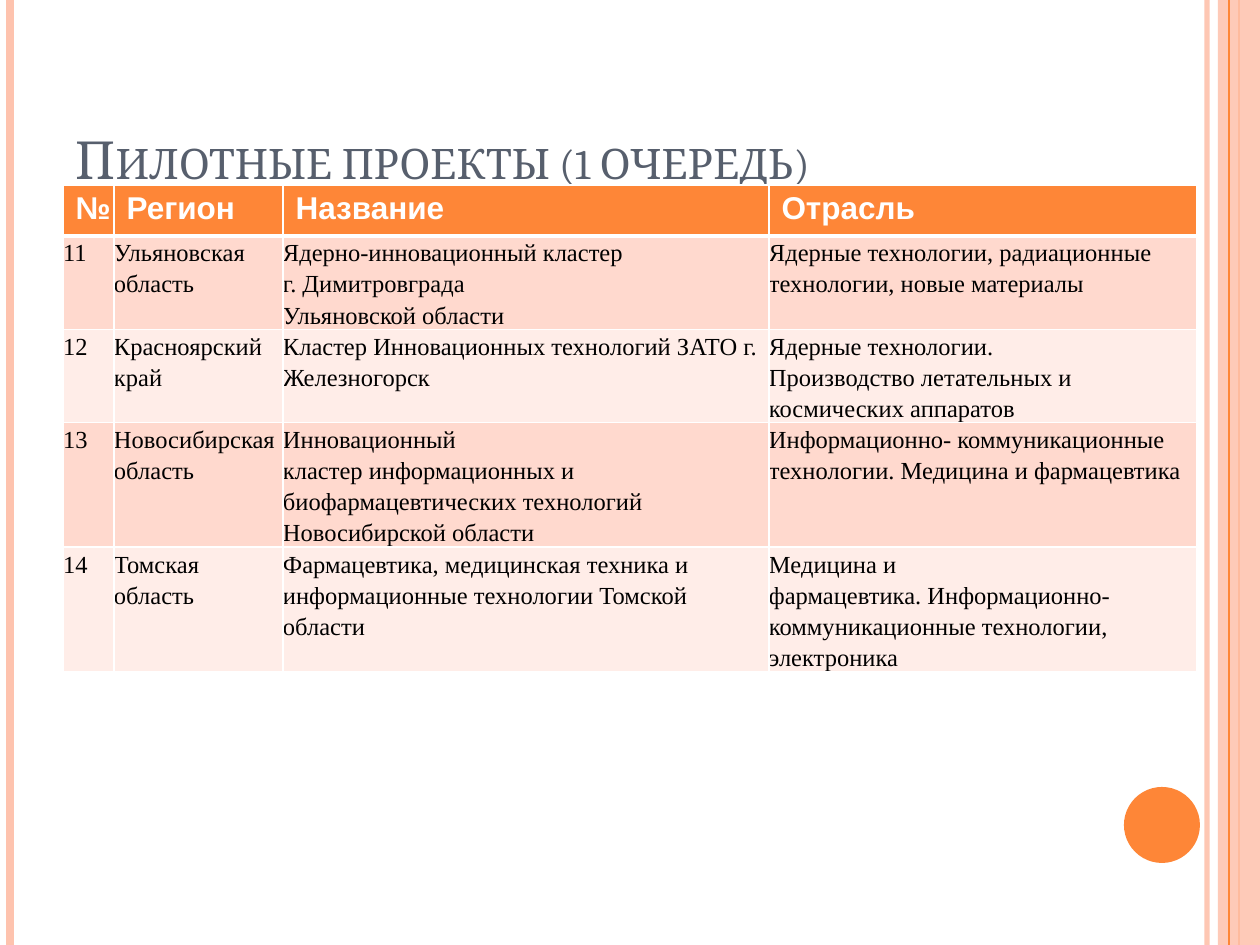
"""Builds the slide with the table of first-round pilot projects."""
from pptx import Presentation, util as u
from pptx.dml.color import RGBColor
from pptx.enum import shapes, text
from pptx.oxml.ns import qn
from pptx.oxml.xmlchemy import OxmlElement

ORANGE, PEACH, WHITE, SLATE, BLACK = "FE8637", "FEC3AE", "FFFFFF", "575F6D", "000000"
BANDS = ["FFD9CE", "FFEDE8"]
TITLE = "Пилотные проекты (1 очередь)"
HEADER = ["№", "Регион", "Название", "Отрасль"]
PROJECTS = [
    ["11", "Ульяновская область",
     "Ядерно-инновационный кластер\nг. Димитровграда\nУльяновской области",
     "Ядерные технологии, радиационные технологии, новые материалы"],
    ["12", "Красноярский край",
     "Кластер Инновационных технологий ЗАТО г. Железногорск",
     "Ядерные технологии.\nПроизводство летательных и космических аппаратов"],
    ["13", "Новосибирская область",
     "Инновационный\nкластер информационных и биофармацевтических технологий Новосибирской области",
     "Информационно- коммуникационные технологии. Медицина и фармацевтика"],
    ["14", "Томская область",
     "Фармацевтика, медицинская техника и информационные технологии Томской области",
     "Медицина и\nфармацевтика. Информационно- коммуникационные технологии, электроника"],
]
COLS = [51, 169, 486, 428]
ROWS = [51, 93, 93, 124, 124]
WIDTH, HEIGHT = 1260, 945
STRIPES = [(1207, PEACH, 3, 93), (10, PEACH, 4.5, 100),
           (1239, ORANGE, 1.5, 100), (1229, ORANGE, 0.75, 100)]
BLOCKS = [(shapes.MSO_SHAPE.RECTANGLE, (1218, 0, 42, HEIGHT), PEACH, 87),
          (shapes.MSO_SHAPE.OVAL, (1124, 787, 76, 76), ORANGE, 100)]


def px(n):
    return u.Emu(n * 914400 // 126)


def rgb(value):
    return RGBColor.from_string(value)


def set_alpha(sp, percent):
    if percent < 100:
        for color in sp._element.iter(qn("a:srgbClr")):
            alpha = OxmlElement("a:alpha")
            alpha.set("val", str(percent * 1000))
            color.append(alpha)


def set_font(p, name, size, color, bold=False):
    p.font.name, p.font.size, p.font.bold = name, u.Pt(size), bold
    p.font.color.rgb = rgb(color)


def add_stripe(s, x, color, width, alpha):
    line = s.shapes.add_connector(shapes.MSO_CONNECTOR.STRAIGHT, px(x), 0, px(x), px(HEIGHT))
    line.line.color.rgb, line.line.width = rgb(color), u.Pt(width)
    line._element.spPr.append(OxmlElement("a:effectLst"))
    set_alpha(line, alpha)


def add_block(s, kind, box, color, alpha):
    sp = s.shapes.add_shape(kind, *map(px, box))
    sp.shadow.inherit = False
    sp.fill.solid()
    sp.fill.fore_color.rgb = rgb(color)
    sp.line.fill.background()
    set_alpha(sp, alpha)


def set_borders(cell, **widths):
    for side, width in widths.items():
        ln = OxmlElement(f"a:ln{side}")
        ln.set("w", str(u.Pt(width)))
        fill, color = OxmlElement("a:solidFill"), OxmlElement("a:srgbClr")
        color.set("val", WHITE)
        fill.append(color)
        ln.append(fill)
        cell._tc.get_or_add_tcPr().append(ln)


def fill_cell(cell, value, row):
    head = row == 0
    set_borders(cell, L=1, R=1, T=3 if row == 1 else 1, B=3 if head else 1)
    cell.fill.solid()
    cell.fill.fore_color.rgb = rgb(ORANGE if head else BANDS[(row - 1) % 2])
    cell.text = value
    if not head:
        cell.margin_left = cell.margin_right = cell.margin_top = cell.margin_bottom = 0
    for p in cell.text_frame.paragraphs:
        if head:
            set_font(p, "Arial", 18, WHITE, True)
        else:
            set_font(p, "Times New Roman", 14, BLACK)
            p.line_spacing = 1.15


def add_title(s):
    sp = s.shapes.title
    sp.left, sp.top, sp.width, sp.height = map(px, (63, 38, 1029, 158))
    tf = sp.text_frame
    tf.text, tf.vertical_anchor = TITLE, text.MSO_ANCHOR.BOTTOM
    p = tf.paragraphs[0]
    p.alignment = text.PP_ALIGN.LEFT
    set_font(p, "Cambria", 30, SLATE)
    p.runs[0].font._element.set("cap", "small")


def add_projects(s):
    box = map(px, (63, 185, sum(COLS), sum(ROWS)))
    table = s.shapes.add_table(len(ROWS), len(COLS), *box).table
    for column, width in zip(table.columns, COLS):
        column.width = px(width)
    for i, (height, values) in enumerate(zip(ROWS, [HEADER] + PROJECTS)):
        table.rows[i].height = px(height)
        for j, value in enumerate(values):
            fill_cell(table.cell(i, j), value, i)


def main():
    prs = Presentation()
    prs.slide_width, prs.slide_height = px(WIDTH), px(HEIGHT)
    s = prs.slides.add_slide(prs.slide_layouts[5])
    for stripe in STRIPES[:3]:
        add_stripe(s, *stripe)
    add_block(s, *BLOCKS[0])
    add_stripe(s, *STRIPES[3])
    add_block(s, *BLOCKS[1])
    add_title(s)
    add_projects(s)
    prs.save("out.pptx")


if __name__ == "__main__":
    main()
